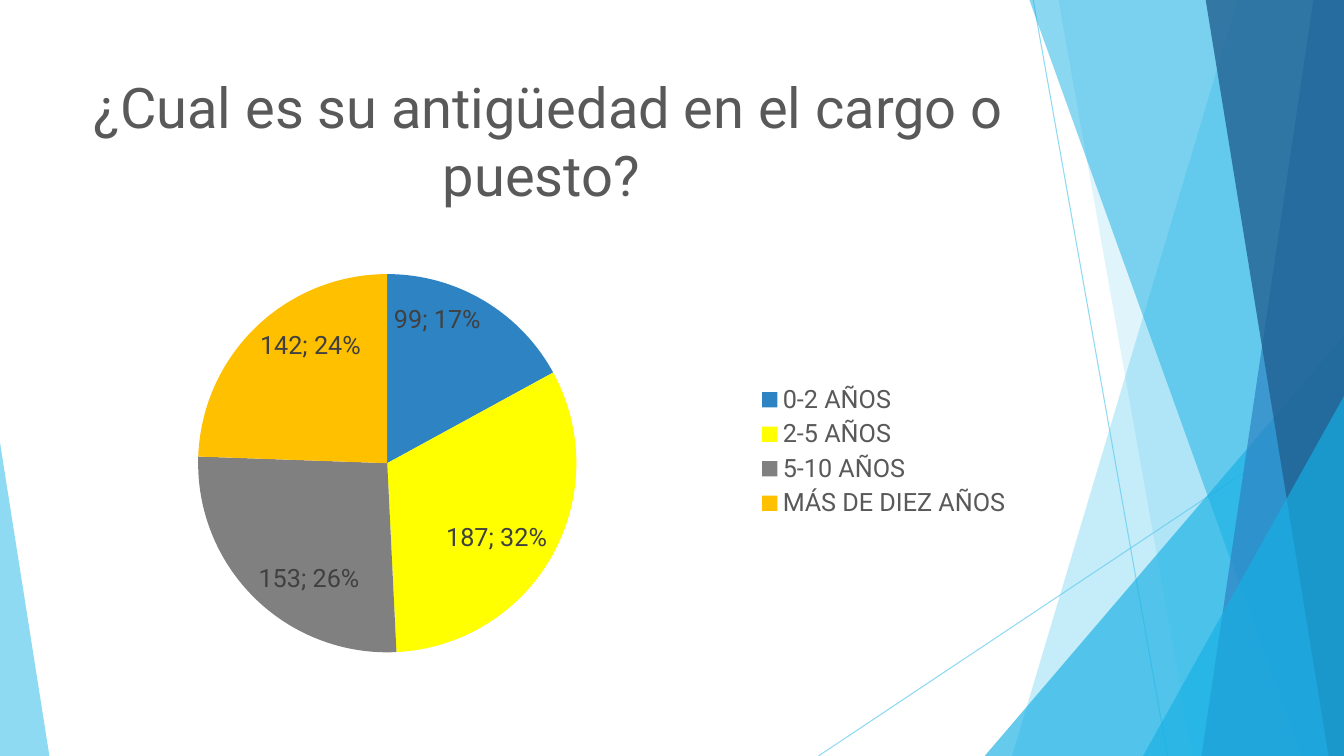
from dataclasses import dataclass

from lxml.etree import SubElement
from pptx import Presentation
from pptx.chart.data import CategoryChartData
from pptx.dml.color import RGBColor
from pptx.enum.chart import XL_CHART_TYPE, XL_LABEL_POSITION, XL_LEGEND_POSITION
from pptx.enum.shapes import MSO_CONNECTOR, MSO_SHAPE
from pptx.enum.text import MSO_ANCHOR, PP_ALIGN
from pptx.oxml import parse_xml
from pptx.oxml.ns import nsdecls, qn
from pptx.slide import Slide
from pptx.util import Pt

PAGE_WIDTH, PAGE_HEIGHT = 960, 540
BAND_TOP = -0.6
CONTENT_LEFT, CONTENT_WIDTH = 53.3, 676.8


@dataclass(frozen=True)
class Ray:
    start_x: float
    start_y: float
    end_x: float
    end_y: float


@dataclass(frozen=True)
class Band:
    top_left: float
    bottom_left: float
    color: str
    opacity: int


@dataclass(frozen=True)
class Corner:
    left: float
    top: float
    width: float
    apex: float
    color: str
    opacity: int


@dataclass(frozen=True)
class Slice:
    label: str
    count: int
    color: str


RAYS = [Ray(738, 0, 834, 540), Ray(960, 290, 584.6, 540)]
FACETS = [
    Band(884.3, 722.9, "5FCBEF", 36),
    Band(756, 851.8, "5FCBEF", 20),
    Corner(703.4, 239.8, 256.6, 1, "17B0E4", 66),
    Band(735.1, 929.5, "17B0E4", 50),
    Band(938.2, 858.2, "2E83C3", 70),
    Band(861.1, 949, "226292", 80),
    Corner(816.5, 283, 143.5, 1, "17B0E4", 66),
    Corner(0, 316.1, 35.3, 0, "5FCBEF", 70),
]
SLICES = [
    Slice("0-2 AÑOS", 99, "2E83C3"),
    Slice("2-5 AÑOS", 187, "FFFF00"),
    Slice("5-10 AÑOS", 153, "808080"),
    Slice("MÁS DE DIEZ AÑOS", 142, "FFC000"),
]
PLOT_LAYOUT = {"x": 0.13, "y": 0.085, "w": 0.4, "h": 0.885}


def rgb(color: str) -> RGBColor:
    return RGBColor.from_string(color)


def set_attributes(target: object, values: dict) -> None:
    for name, value in values.items():
        setattr(target, name, value)


def set_font(font: object, size: float, color: str) -> None:
    set_attributes(font, {"name": "Roboto", "size": Pt(size), "bold": False})
    font.color.rgb = rgb(color)


def set_opacity(shape: object, opacity: int) -> None:
    for color in shape.element.spPr.iter(qn("a:srgbClr")):
        SubElement(color, qn("a:alpha"), val=str(opacity * 1000))


def draw_ray(page: Slide, ray: Ray) -> None:
    line = page.shapes.add_connector(
        MSO_CONNECTOR.STRAIGHT,
        Pt(ray.start_x), Pt(ray.start_y), Pt(ray.end_x), Pt(ray.end_y),
    )
    line.line.color.rgb = rgb("5FCBEF")
    line.line.width = Pt(0.75)
    set_opacity(line, 70)
    SubElement(line.element.spPr, qn("a:effectLst"))


def draw_facet(page: Slide, facet: Band | Corner) -> None:
    if isinstance(facet, Band):
        builder = page.shapes.build_freeform(Pt(facet.top_left), Pt(BAND_TOP))
        corners = [
            (PAGE_WIDTH, BAND_TOP),
            (PAGE_WIDTH, PAGE_HEIGHT),
            (facet.bottom_left, PAGE_HEIGHT),
        ]
        builder.add_line_segments([(Pt(x), Pt(y)) for x, y in corners], close=True)
        shape = builder.convert_to_shape()
    else:
        shape = page.shapes.add_shape(
            MSO_SHAPE.ISOSCELES_TRIANGLE, Pt(facet.left), Pt(facet.top),
            Pt(facet.width), Pt(PAGE_HEIGHT - facet.top),
        )
        shape.adjustments[0] = facet.apex
    shape.shadow.inherit = False
    shape.fill.solid()
    shape.fill.fore_color.rgb = rgb(facet.color)
    shape.line.fill.background()
    set_opacity(shape, facet.opacity)


def draw_title(page: Slide) -> None:
    box = page.shapes.add_textbox(
        Pt(CONTENT_LEFT), Pt(48.2), Pt(CONTENT_WIDTH), Pt(103.7)
    )
    set_attributes(
        box.text_frame, {"word_wrap": True, "vertical_anchor": MSO_ANCHOR.MIDDLE}
    )
    para = box.text_frame.paragraphs[0]
    para.alignment = PP_ALIGN.CENTER
    span = para.add_run()
    span.text = "¿Cual es su antigüedad en el cargo o puesto? "
    set_font(span.font, 40, "595959")


def draw_chart(page: Slide) -> None:
    data = CategoryChartData()
    data.categories = [item.label for item in SLICES]
    data.add_series("Series 1", [item.count for item in SLICES])
    chart = page.shapes.add_chart(
        XL_CHART_TYPE.PIE, Pt(CONTENT_LEFT), Pt(169.9),
        Pt(CONTENT_WIDTH), Pt(305.3), data,
    ).chart
    set_attributes(chart, {"has_title": False, "has_legend": True})
    set_font(chart.font, 18, "000000")
    set_attributes(
        chart.legend,
        {"position": XL_LEGEND_POSITION.RIGHT, "include_in_layout": False},
    )
    set_font(chart.legend.font, 18, "595959")

    plot = chart.plots[0]
    set_attributes(plot, {"vary_by_categories": True, "has_data_labels": True})
    set_attributes(plot.data_labels, {
        "show_value": True,
        "show_percentage": True,
        "position": XL_LABEL_POSITION.INSIDE_END,
    })
    set_font(plot.data_labels.font, 18, "404040")
    separator = parse_xml(f'<c:separator {nsdecls("c")}>; </c:separator>')
    labels = next(chart.element.iter(qn("c:dLbls")))
    labels.find(qn("c:showBubbleSize")).addnext(separator)

    for index, item in enumerate(SLICES):
        point = plot.series[0].points[index].format
        point.fill.solid()
        point.fill.fore_color.rgb = rgb(item.color)
        point.line.fill.background()

    area = next(chart.element.iter(qn("c:plotArea")))
    for old_layout in area.findall(qn("c:layout")):
        area.remove(old_layout)
    layout = parse_xml(f'<c:layout {nsdecls("c")}/>')
    manual = SubElement(layout, qn("c:manualLayout"))
    SubElement(manual, qn("c:layoutTarget"), val="inner")
    for side in "xy":
        SubElement(manual, qn(f"c:{side}Mode"), val="edge")
    for side, share in PLOT_LAYOUT.items():
        SubElement(manual, qn(f"c:{side}"), val=str(share))
    area.insert(0, layout)


def main() -> None:
    deck = Presentation()
    set_attributes(
        deck, {"slide_width": Pt(PAGE_WIDTH), "slide_height": Pt(PAGE_HEIGHT)}
    )
    page = deck.slides.add_slide(deck.slide_layouts[6])
    for ray in RAYS:
        draw_ray(page, ray)
    for facet in FACETS:
        draw_facet(page, facet)
    draw_title(page)
    draw_chart(page)
    deck.save("out.pptx")


if __name__ == "__main__":
    main()
